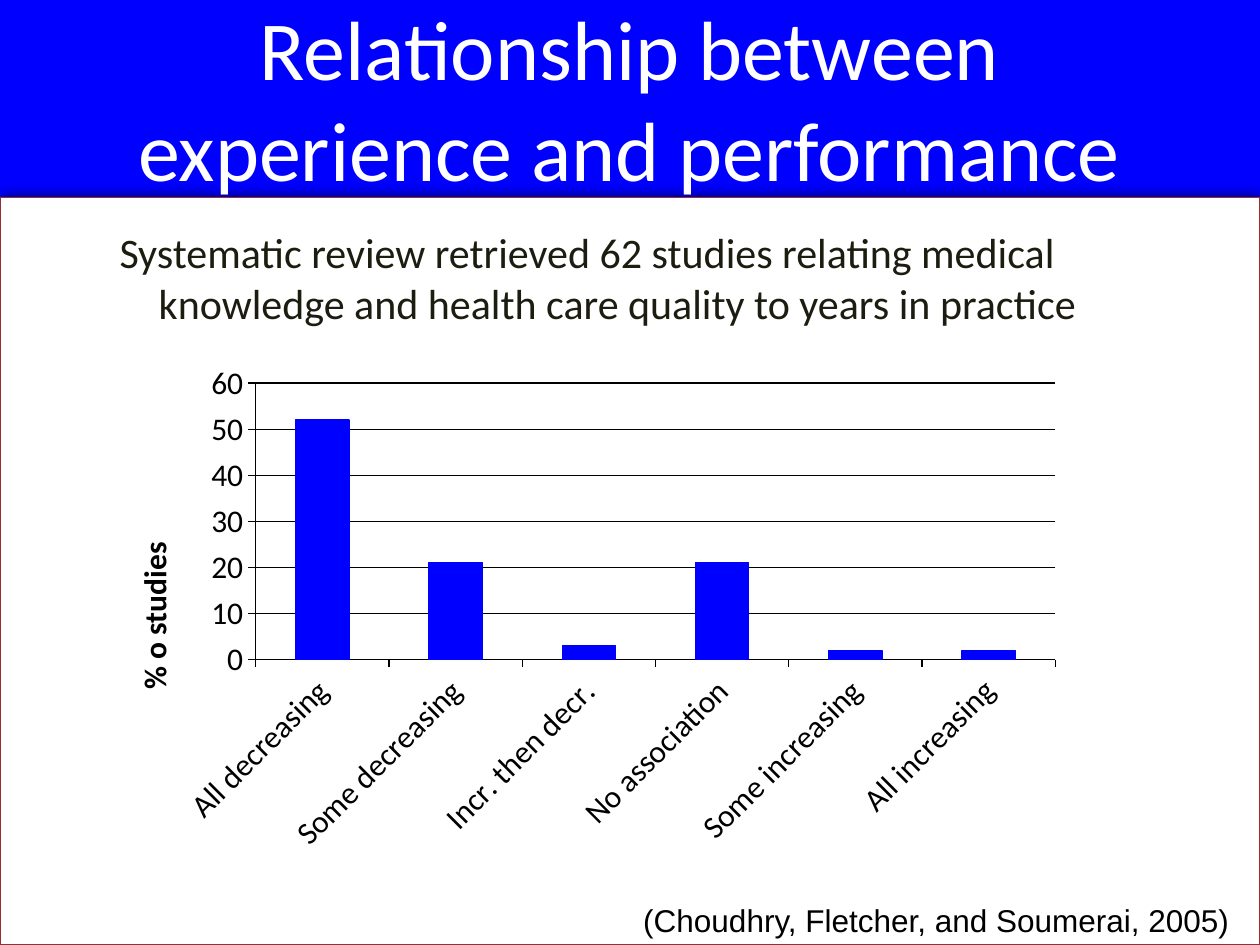
import lxml.etree
import pptx
import pptx.chart.data
import pptx.dml.color
import pptx.enum.chart
import pptx.enum.shapes
import pptx.enum.text
import pptx.oxml
import pptx.oxml.ns
import pptx.util
from pptx.util import Cm, Pt

BLUE = pptx.dml.color.RGBColor(0x00, 0x00, 0xFF)
WHITE = pptx.dml.color.RGBColor(0xFF, 0xFF, 0xFF)
BLACK = pptx.dml.color.RGBColor(0x00, 0x00, 0x00)
MAROON = pptx.dml.color.RGBColor(0x98, 0x2E, 0x2E)
INK = pptx.dml.color.RGBColor(0x1C, 0x1C, 0x10)

STUDY_SHARES = {
    "All decreasing": 52,
    "Some decreasing": 21,
    "Incr. then decr.": 3,
    "No association": 21,
    "Some increasing": 2,
    "All increasing": 2,
}


def style_font(font, size, color, name="Calibri", bold=False):
    font.size = Pt(size)
    font.name = name
    font.bold = bold
    font.color.rgb = color


def style_line(line, color, width):
    line.color.rgb = color
    line.width = Pt(width)


def set_layout(element, **settings):
    qn = pptx.oxml.ns.qn
    layout = element.find(qn("c:layout"))
    if layout is None:
        layout = lxml.etree.Element(qn("c:layout"))
        text = element.find(qn("c:tx"))
        element.insert(0 if text is None else 1, layout)
    for child in list(layout):
        layout.remove(child)
    manual = lxml.etree.SubElement(layout, qn("c:manualLayout"))
    for tag, value in settings.items():
        lxml.etree.SubElement(manual, qn(f"c:{tag}")).set("val", str(value))


def add_panel(slide, left, top, width, height):
    panel = slide.shapes.add_shape(
        pptx.enum.shapes.MSO_SHAPE.RECTANGLE, left, top, width, height)
    panel.fill.solid()
    panel.fill.fore_color.rgb = WHITE
    style_line(panel.line, MAROON, 1)
    panel.shadow.inherit = False
    effects = panel.fill._xPr.find(pptx.oxml.ns.qn("a:effectLst"))
    effects.append(pptx.oxml.parse_xml(
        f'<a:outerShdw {pptx.oxml.ns.nsdecls("a")} blurRad="{Pt(8)}" '
        f'dist="{Pt(2)}" dir="2700000" algn="ctr" rotWithShape="0">'
        '<a:srgbClr val="000000"><a:alpha val="80000"/></a:srgbClr>'
        '</a:outerShdw>'))
    slide.shapes._spTree.insert(2, panel._element)


def place_title(slide, left, top, width, height):
    title = slide.shapes.title
    title.left, title.top, title.width, title.height = left, top, width, height
    frame = title.text_frame
    frame.text = "Relationship between experience and performance"
    frame.word_wrap = True
    frame.auto_size = pptx.enum.text.MSO_AUTO_SIZE.NONE
    frame.vertical_anchor = pptx.enum.text.MSO_ANCHOR.MIDDLE
    heading = frame.paragraphs[0]
    heading.alignment = pptx.enum.text.PP_ALIGN.CENTER
    style_font(heading.font, 48, WHITE)


def add_summary(slide, left, top, width, height):
    frame = slide.shapes.add_textbox(left, top, width, height).text_frame
    frame.word_wrap = True
    summary = frame.paragraphs[0]
    summary.text = ("Systematic review retrieved 62 studies relating medical "
                    "knowledge and health care quality to years in practice")
    style_font(summary.font, 24, INK)
    hanging = Cm(0.79)
    properties = summary._p.get_or_add_pPr()
    properties.set("marL", str(hanging))
    properties.set("indent", str(-hanging))


def add_study_chart(slide, left, top, width, height):
    data = pptx.chart.data.CategoryChartData()
    data.categories = list(STUDY_SHARES)
    data.add_series("Series 1", list(STUDY_SHARES.values()))
    chart = slide.shapes.add_chart(
        pptx.enum.chart.XL_CHART_TYPE.COLUMN_CLUSTERED,
        left, top, width, height, data).chart
    chart.has_legend = False
    chart.has_title = False
    style_font(chart.font, 18, BLACK)

    plot = chart.plots[0]
    plot.gap_width = 150
    plot.vary_by_categories = False
    columns = plot.series[0].format
    columns.fill.solid()
    columns.fill.fore_color.rgb = BLUE
    style_line(columns.line, BLUE, 0.75)

    for axis in (chart.category_axis, chart.value_axis):
        axis.major_tick_mark = pptx.enum.chart.XL_TICK_MARK.OUTSIDE
        axis.minor_tick_mark = pptx.enum.chart.XL_TICK_MARK.NONE
        style_font(axis.tick_labels.font, 18, BLACK)
        style_line(axis.format.line, BLACK, 0.75)
    labels = chart.category_axis._element.find(pptx.oxml.ns.qn("c:txPr"))
    labels.find(pptx.oxml.ns.qn("a:bodyPr")).set("rot", "-2700000")

    shares = chart.value_axis
    shares.minimum_scale, shares.maximum_scale, shares.major_unit = 0, 60, 10
    shares.has_major_gridlines = True
    style_line(shares.major_gridlines.format.line, BLACK, 0.75)
    caption = shares.axis_title.text_frame
    caption.text = "% o studies"
    style_font(caption.paragraphs[0].font, 18, BLACK, bold=True)
    caption._txBody.find(pptx.oxml.ns.qn("a:bodyPr")).set("rot", "-5400000")

    set_layout(shares.axis_title._element,
               xMode="edge", yMode="edge", x=0.02, y=0.36)
    set_layout(chart._chartSpace.chart.plotArea,
               layoutTarget="inner", xMode="edge", yMode="edge",
               x=0.152, y=0.099, w=0.819, h=0.47)


def add_citation(slide, left, top, width, height):
    frame = slide.shapes.add_textbox(left, top, width, height).text_frame
    frame.word_wrap = True
    frame.margin_right = Cm(0.62)
    citation = frame.paragraphs[0]
    citation.text = "(Choudhry, Fletcher, and Soumerai, 2005)"
    citation.alignment = pptx.enum.text.PP_ALIGN.RIGHT
    style_font(citation.font, 18, BLACK, name="Arial")


def main():
    deck = pptx.Presentation()
    deck.slide_width, deck.slide_height = Cm(25.4), Cm(19.05)
    slide = deck.slides.add_slide(deck.slide_layouts.get_by_name("Title Only"))
    slide.background.fill.solid()
    slide.background.fill.fore_color.rgb = BLUE

    margin, content_width = Cm(2.16), Cm(21.06)
    panel_top = Cm(3.98)
    add_panel(slide, 0, panel_top, deck.slide_width,
              deck.slide_height - panel_top)
    place_title(slide, margin, Cm(0.18), content_width, Cm(3.56))
    add_summary(slide, margin, Cm(4.45), content_width, Cm(2.74))
    add_study_chart(slide, margin, Cm(6.55), Cm(19.69), Cm(11.86))
    add_citation(slide, Cm(8.61), Cm(18.03), Cm(16.79), Cm(1.02))
    deck.save("out.pptx")


if __name__ == "__main__":
    main()
